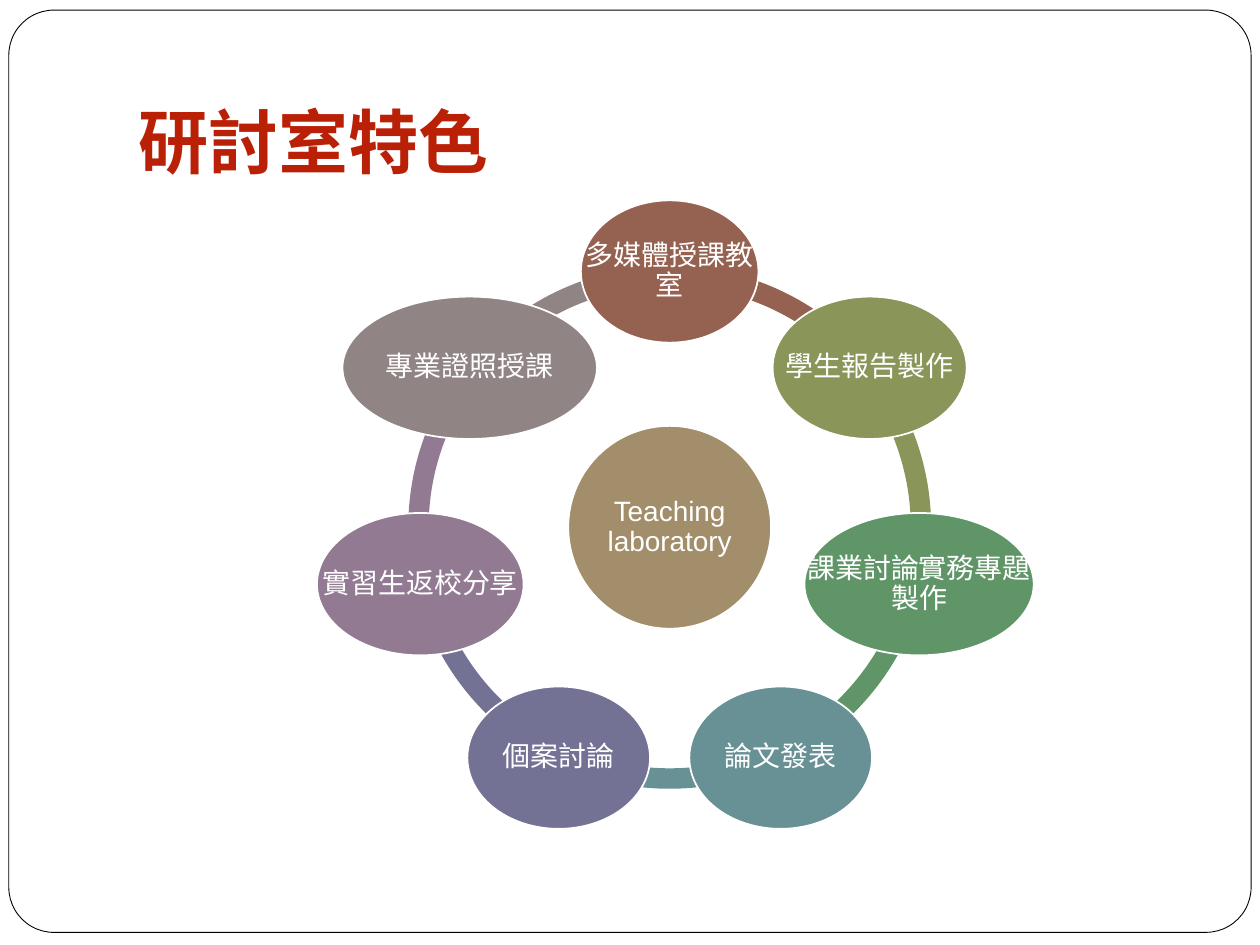
"""Build a slide with a ring of seven classroom features around a teaching laboratory."""
import math

import pptx
import pptx.dml.color
import pptx.enum.shapes
import pptx.enum.text
import pptx.util

Inches = pptx.util.Inches
Pt = pptx.util.Pt
RGBColor = pptx.dml.color.RGBColor
Shape = pptx.enum.shapes.MSO_SHAPE
Anchor = pptx.enum.text.MSO_ANCHOR
Align = pptx.enum.text.PP_ALIGN

WHITE = RGBColor(0xFF, 0xFF, 0xFF)
BLACK = RGBColor(0x00, 0x00, 0x00)
TITLE_RED = RGBColor(0xBA, 0x20, 0x06)
TAN = RGBColor(0xA2, 0x8E, 0x6A)
BROWN = RGBColor(0x95, 0x62, 0x51)
OLIVE = RGBColor(0x89, 0x95, 0x59)
GREEN = RGBColor(0x60, 0x95, 0x68)
TEAL = RGBColor(0x68, 0x91, 0x95)
INDIGO = RGBColor(0x73, 0x72, 0x94)
PURPLE = RGBColor(0x92, 0x7B, 0x92)
GRAY = RGBColor(0x91, 0x84, 0x85)

FEATURES = [
    ("多媒體授課教室", 1.41, BROWN),
    ("學生報告製作", 1.54, OLIVE),
    ("課業討論實務專題製作", 1.82, GREEN),
    ("論文發表", 1.45, TEAL),
    ("個案討論", 1.45, INDIGO),
    ("實習生返校分享", 1.64, PURPLE),
    ("專業證照授課", 2.02, GRAY),
]
CENTER_X, CENTER_Y = 5.315, 4.185
RING_SIZE = 4.15
NODE_RADIUS = 2.03
NODE_HEIGHT = 1.13
HUB_SIZE = 1.61
STEP = 360 / len(FEATURES)
ADJUSTMENT_PER_DEGREE = 0.6


def add_shape(shapes, kind, left, top, width, height, fill, line=None, weight=1):
    shape = shapes.add_shape(kind, Inches(left), Inches(top), Inches(width), Inches(height))
    shape.shadow.inherit = False
    shape.fill.solid()
    shape.fill.fore_color.rgb = fill
    if line is None:
        shape.line.fill.background()
    else:
        shape.line.color.rgb = line
        shape.line.width = Pt(weight)
    return shape


def add_node(shapes, text, x, y, width, height, fill):
    left, top = x - width / 2, y - height / 2
    add_shape(shapes, Shape.OVAL, left, top, width, height, fill, line=WHITE)
    box = shapes.add_textbox(Inches(left), Inches(top), Inches(width), Inches(height))
    frame = box.text_frame
    frame.word_wrap = True
    frame.vertical_anchor = Anchor.MIDDLE
    frame.margin_left = frame.margin_right = Inches(0.02)
    frame.margin_top = frame.margin_bottom = Inches(0.02)
    para = frame.paragraphs[0]
    para.alignment = Align.CENTER
    para.line_spacing = 0.9
    span = para.add_run()
    span.text = text
    span.font.name = "Arial"
    span.font.size = Pt(16)
    span.font.color.rgb = WHITE


deck = pptx.Presentation()
deck.slide_width = Inches(10)
deck.slide_height = Inches(7.5)
page = deck.slides.add_slide(deck.slide_layouts[5])

border = add_shape(page.shapes, Shape.ROUNDED_RECTANGLE, 0.07, 0.08, 9.86, 7.32,
                   WHITE, line=BLACK, weight=0.5)
border.adjustments[0] = 0.049
page.shapes._spTree.insert(2, border._element)

title = page.shapes.title
title.left, title.top = Inches(1), Inches(0.3)
title.width, title.height = Inches(8.5), Inches(1.25)
title_frame = title.text_frame
title_frame.auto_size = pptx.enum.text.MSO_AUTO_SIZE.NONE
title_frame.vertical_anchor = Anchor.BOTTOM
title_frame.margin_bottom = Inches(0.1)
title_para = title_frame.paragraphs[0]
title_para.alignment = Align.LEFT
title_span = title_para.add_run()
title_span.text = "研討室特色"
title_span.font.name = "Cabin"
title_span.font.size = Pt(40)
title_span.font.bold = True
title_span.font.color.rgb = TITLE_RED

diagram = page.shapes.add_group_shape().shapes
for index, (text, width, color) in reversed(list(enumerate(FEATURES))):
    arc = add_shape(diagram, Shape.BLOCK_ARC, CENTER_X - RING_SIZE / 2,
                    CENTER_Y - RING_SIZE / 2, RING_SIZE, RING_SIZE, color)
    start = 270 + index * STEP
    arc.adjustments[0] = start % 360 * ADJUSTMENT_PER_DEGREE
    arc.adjustments[1] = (start + STEP) % 360 * ADJUSTMENT_PER_DEGREE
    arc.adjustments[2] = 0.039

add_node(diagram, "Teaching laboratory", CENTER_X, CENTER_Y, HUB_SIZE, HUB_SIZE, TAN)
for index, (text, width, color) in enumerate(FEATURES):
    angle = math.radians(index * STEP)
    add_node(diagram, text, CENTER_X + NODE_RADIUS * math.sin(angle),
             CENTER_Y - NODE_RADIUS * math.cos(angle), width, NODE_HEIGHT, color)

deck.save("out.pptx")
